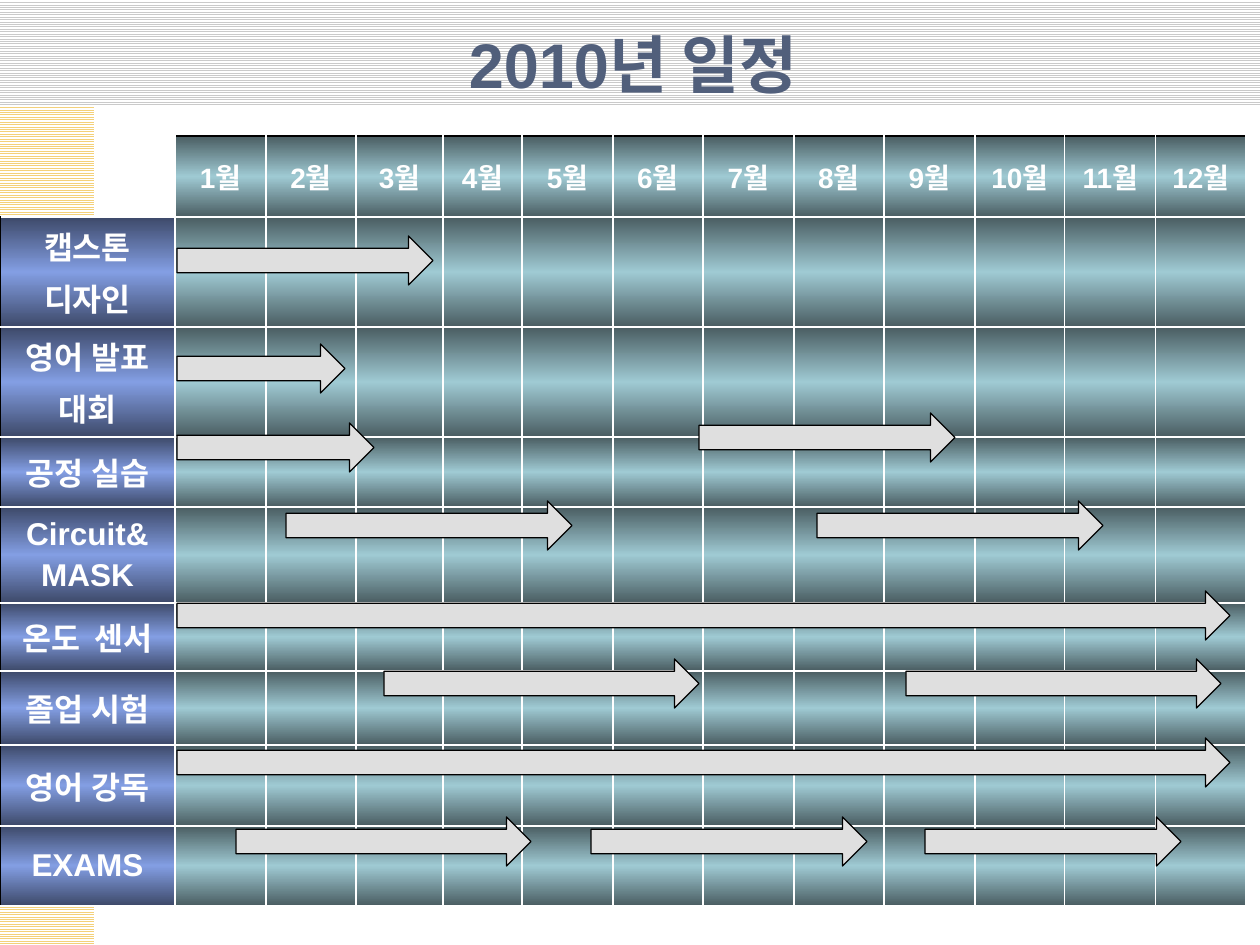
from dataclasses import dataclass

from pptx import Presentation
from pptx.dml.color import RGBColor
from pptx.enum.dml import MSO_PATTERN
from pptx.enum.shapes import MSO_SHAPE
from pptx.enum.text import MSO_ANCHOR, PP_ALIGN
from pptx.oxml import parse_xml
from pptx.oxml.ns import nsdecls
from pptx.util import Emu, Pt


@dataclass(frozen=True)
class Theme:
    font: str = "Arial"
    title: str = "515F7B"
    white: str = "FFFFFF"
    black: str = "000000"
    grey_stripe: str = "CACACA"
    gold_stripe: str = "F4D17A"
    arrow: str = "DFDFDF"
    label_grad: tuple = ("3D4969", "839EE3")
    month_grad: tuple = ("4A5D62", "9FCAD3")
    title_pt: int = 36
    label_pt: int = 18
    month_pt: int = 16


T = Theme()
PX = 914400 / 126
rgb = RGBColor.from_string


def px(*lengths):
    return [Emu(round(n * PX)) for n in lengths]


def write(tf, text, size, color):
    """Fill a text frame with centred bold lines, spaced by a fifth of the type size."""
    tf.text = text
    for i, p in enumerate(tf.paragraphs):
        p.alignment = PP_ALIGN.CENTER
        if i:
            p.space_before = Pt(size * 0.2)
        look = {"name": T.font, "size": Pt(size), "bold": True}
        for r in p.runs:
            for key, value in look.items():
                setattr(r.font, key, value)
            r.font.color.rgb = rgb(color)


prs = Presentation()
prs.slide_width, prs.slide_height = px(1260, 945)
s = prs.slides.add_slide(prs.slide_layouts[6])

# Striped bands along the top and left
for box, color in (((0, 0, 1260, 105), T.grey_stripe),
                   ((0, 105, 94, 840), T.gold_stripe)):
    sp = s.shapes.add_shape(MSO_SHAPE.RECTANGLE, *px(*box))
    sp.shadow.inherit = False
    sp.line.fill.background()
    sp.fill.patterned()
    sp.fill.pattern = MSO_PATTERN.LIGHT_HORIZONTAL
    sp.fill.fore_color.rgb = rgb(color)
    sp.fill.back_color.rgb = rgb(T.white)

tf = s.shapes.add_textbox(*px(63, 32, 1140, 63)).text_frame
tf.word_wrap = True
tf.vertical_anchor = MSO_ANCHOR.MIDDLE
write(tf, "2010년 일정", T.title_pt, T.title)

# Schedule grid: activities down, months across
activities = ["캡스톤\n디자인", "영어 발표\n대회", "공정 실습", "Circuit&\nMASK",
              "온도  센서", "졸업 시험", "영어 강독", "EXAMS"]
col_edges = [0, 175, 266, 356, 443, 522, 613, 703, 794, 884, 975, 1065, 1156, 1246]
row_heights = [81, 110, 110, 70, 96, 68, 74, 81, 80]

table = s.shapes.add_table(len(row_heights), len(col_edges) - 1,
                           *px(0, 136, col_edges[-1], sum(row_heights))).table
table.first_row = table.horz_banding = False
for col, left, right in zip(table.columns, col_edges, col_edges[1:]):
    col.width, = px(right - left)
for row, height in zip(table.rows, row_heights):
    row.height, = px(height)

for i, row in enumerate(table.rows):
    for j, cell in enumerate(row.cells):
        corner = i == 0 and j == 0
        cell.vertical_anchor = MSO_ANCHOR.MIDDLE
        if i == 0 and j:
            write(cell.text_frame, f"{j}월", T.month_pt, T.white)
        elif i and j == 0:
            write(cell.text_frame, activities[i - 1], T.label_pt, T.white)

        borders = {"lnL": T.white if j else T.black, "lnR": T.white,
                   "lnT": T.white if i else T.black, "lnB": T.white}
        tcPr = cell._tc.get_or_add_tcPr()
        for tag, color in borders.items():
            hidden = corner and tag in ("lnL", "lnT")
            paint = ("<a:noFill/>" if hidden else
                     f'<a:solidFill><a:srgbClr val="{color}"/></a:solidFill>')
            tcPr.append(parse_xml(f'<a:{tag} {nsdecls("a")} w="12700">{paint}</a:{tag}>'))

        if corner:
            cell.fill.background()
            continue
        edge, middle = T.month_grad if j else T.label_grad
        stops = "".join(f'<a:gs pos="{pos}"><a:srgbClr val="{color}"/></a:gs>'
                        for pos, color in ((0, edge), (50000, middle), (100000, edge)))
        tcPr.append(parse_xml(f'<a:gradFill {nsdecls("a")}><a:gsLst>{stops}</a:gsLst>'
                              '<a:lin ang="5400000" scaled="0"/></a:gradFill>'))

# Period arrows: top, then (left, width) of each period
periods = [
    (236, [(177, 256)]),
    (344, [(177, 168)]),
    (423, [(177, 197)]),
    (413, [(699, 256)]),
    (501, [(286, 286), (817, 286)]),
    (591, [(177, 1053)]),
    (659, [(384, 315), (906, 315)]),
    (738, [(177, 1053)]),
    (817, [(236, 295), (591, 276), (925, 256)]),
]
for top, spans in periods:
    for left, width in spans:
        sp = s.shapes.add_shape(MSO_SHAPE.RIGHT_ARROW, *px(left, top, width, 49))
        sp.shadow.inherit = False
        sp.fill.solid()
        sp.fill.fore_color.rgb = rgb(T.arrow)
        sp.line.color.rgb = rgb(T.black)
        sp.line.width = Pt(0.75)

prs.save("out.pptx")
